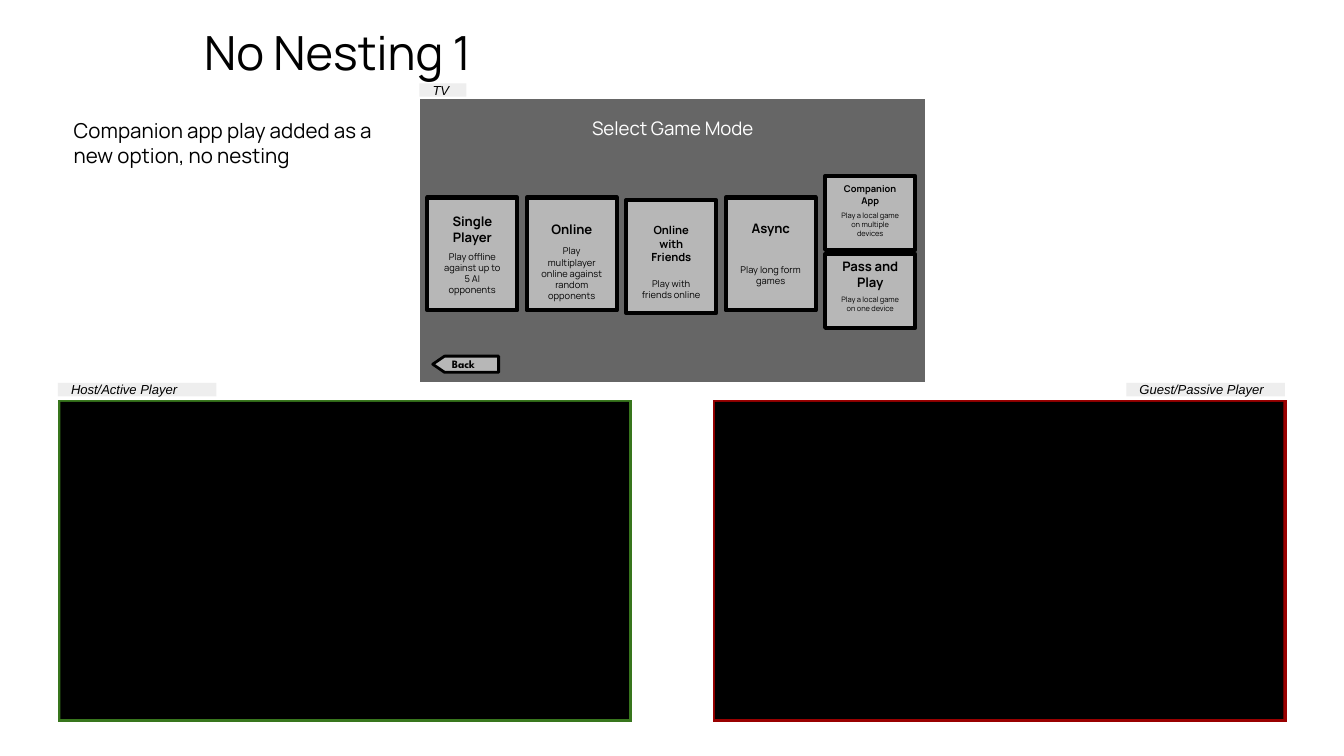
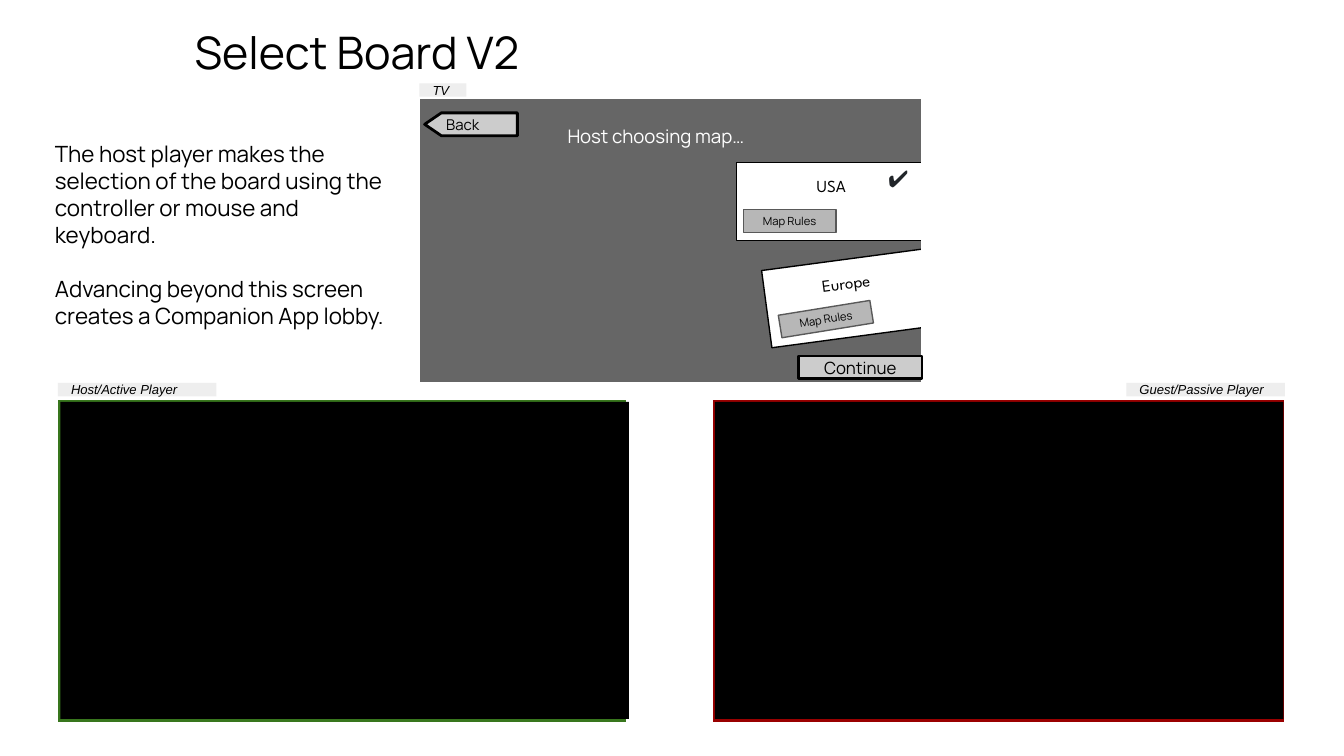
import dataclasses

import pptx
import pptx.dml.color
import pptx.enum.shapes
import pptx.enum.text
import pptx.oxml.ns
import pptx.util

Inches = pptx.util.Inches
Pt = pptx.util.Pt
SHAPE = pptx.enum.shapes.MSO_SHAPE
ALIGN = pptx.enum.text.PP_ALIGN
ANCHOR = pptx.enum.text.MSO_ANCHOR


@dataclasses.dataclass(frozen=True)
class Theme:
    black: str = "000000"
    white: str = "FFFFFF"
    host: str = "38761D"
    guest: str = "990000"
    tv: str = "666666"
    tag: str = "EEEEEE"
    card: str = "B7B7B7"
    button: str = "CCCCCC"
    button_edge: str = "595959"
    tick: str = "212529"
    font: str = "Manrope"
    tag_font: str = "Arial"
    map_font: str = "League Spartan"
    modes_title: float = 25.2
    board_title: float = 24
    modes_body: float = 11
    board_body: float = 12
    prompt: float = 10
    card_title: float = 7
    friends_title: float = 6
    card_note: float = 5
    small_note: float = 4
    tag_size: float = 7
    small_button: float = 6
    back: float = 8
    map_name: float = 9
    tick_size: float = 12.5
    thin: float = 0.75
    medium: float = 1.5
    thick: float = 2.25


THEME = Theme()

# Frame left, frame colour, label left, label
PLAYERS = (
    (0.43, THEME.host, 0.43, "Host/Active Player"),
    (5.3, THEME.guest, 8.38, "Guest/Passive Player"),
)
FRAME_TOP, FRAME_W, FRAME_H = 2.97, 4.28, 2.41
CARD_LEFT, CARD_STEP, CARD_W = 3.18, 0.74, 0.67
CARD_H, SMALL_CARD_H = 0.84, 0.55

# Column, top, height, title, title size, title offset, note, note size, note offset
CARDS = (
    (0, 1.47, CARD_H, "Single Player", THEME.card_title, 0.08,
     "Play offline against up to 5 AI opponents", THEME.card_note, 0.41),
    (1, 1.47, CARD_H, "Online", THEME.card_title, 0.08,
     "Play multiplayer online against random opponents", THEME.card_note, 0.41),
    (2, 1.49, CARD_H, "Online\vwith Friends", THEME.friends_title, 0.17,
     "Play with friends online", THEME.card_note, 0.51),
    (3, 1.47, CARD_H, "Async", THEME.card_title, 0.07,
     "Play long form games", THEME.card_note, 0.42),
    (4, 1.31, SMALL_CARD_H, "Companion App", THEME.card_note, 0.04,
     "Play a local game on multiple devices", THEME.small_note, 0.26),
    (4, 1.89, SMALL_CARD_H, "Pass and Play", THEME.card_title, 0.05,
     "Play a local game on one device", THEME.small_note, 0.27),
)


def rgb(value):
    return pptx.dml.color.RGBColor.from_string(value)


def write(s, paragraphs, size, color=THEME.black, font=THEME.font, align=ALIGN.LEFT,
          anchor=ANCHOR.MIDDLE, gap=0, **style):
    tf = s.text_frame
    frame = {"word_wrap": True, "vertical_anchor": anchor}
    frame.update({f"margin_{side}": Inches(0.1) for side in ("left", "top", "right", "bottom")})
    for name, value in frame.items():
        setattr(tf, name, value)
    for i, text in enumerate(paragraphs):
        p = tf.add_paragraph() if i else tf.paragraphs[0]
        p.text = text
        p.alignment = align
        if i and gap:
            p.space_before = Pt(gap)
        for r in p.runs:
            for name, value in {"name": font, "size": Pt(size), **style}.items():
                setattr(r.font, name, value)
            r.font.color.rgb = rgb(color)


def add_text(slide, at, *paragraphs, **style):
    write(slide.shapes.add_textbox(*map(Inches, at)), paragraphs, **style)


def add_box(slide, at, fill, line=None, width=THEME.thin, preset=SHAPE.RECTANGLE, rotation=0):
    s = slide.shapes.add_shape(preset, *map(Inches, at))
    s.shadow.inherit = False
    s.rotation = rotation
    s.fill.solid()
    s.fill.fore_color.rgb = rgb(fill)
    if line:
        s.line.color.rgb = rgb(line)
        s.line.width = Pt(width)
    else:
        s.line.fill.background()
    return s


def add_title(slide, left, width, text, size):
    add_text(slide, (left, 0.07, width, 0.63), text, size=size)


def add_tag(slide, left, top, width, text):
    s = add_box(slide, (left, top, width, 0.1), THEME.tag)
    write(s, [text], THEME.tag_size, font=THEME.tag_font, italic=True)


def add_frames(slide):
    """Adds the TV and both player frames with their tags."""
    add_box(slide, (3.12, 0.73, 3.77, 2.12), THEME.tv, THEME.white)
    add_tag(slide, 3.12, 0.62, 0.35, "TV")
    for left, color, tag_left, label in PLAYERS:
        add_box(slide, (left, FRAME_TOP, FRAME_W, FRAME_H), color, THEME.white)
        add_tag(slide, tag_left, 2.85, 1.18, label)


def add_player_screens(slide):
    for left, *_ in PLAYERS:
        add_box(slide, (left + 0.02, FRAME_TOP + 0.02, FRAME_W - 0.05, FRAME_H - 0.05),
                THEME.black)


def add_back_button(slide, at, fill, size, **style):
    s = add_box(slide, at, fill, THEME.black, THEME.medium, SHAPE.PENTAGON)
    s.adjustments[0] = 0.73
    s._element.spPr.find(pptx.oxml.ns.qn("a:xfrm")).set("flipH", "1")
    write(s, ["Back"], size, **style)


def add_mode_card(slide, column, top, height, title, title_size, title_dy,
                  note, note_size, note_dy):
    left = CARD_LEFT + CARD_STEP * column
    text_h = 0.31 if height == CARD_H else 0.2
    add_box(slide, (left, top, CARD_W, height), THEME.card, THEME.black, THEME.thick)
    add_text(slide, (left, top + title_dy, CARD_W, text_h), title,
             size=title_size, align=ALIGN.CENTER, bold=True)
    add_text(slide, (left, top + note_dy, CARD_W, text_h), note,
             size=note_size, align=ALIGN.CENTER)


def add_map_card(slide, at, name, rotation=0):
    s = add_box(slide, at, THEME.white, THEME.black, rotation=rotation)
    write(s, [name], THEME.map_name, font=THEME.map_font, align=ALIGN.CENTER,
          anchor=ANCHOR.TOP)


def add_rules_button(slide, left, top, rotation=0):
    s = add_box(slide, (left, top, 0.69, 0.17), THEME.card, THEME.button_edge,
                rotation=rotation)
    write(s, ["Map Rules"], THEME.small_button, align=ALIGN.CENTER)


def build_game_modes(slide):
    add_frames(slide)
    add_player_screens(slide)
    add_text(slide, (3.99, 0.84, 2.03, 0.22), "Select Game Mode",
             size=THEME.prompt, color=THEME.white, align=ALIGN.CENTER)
    for card in CARDS:
        add_mode_card(slide, *card)
    add_back_button(slide, (3.22, 2.65, 0.49, 0.12), THEME.card, THEME.small_button,
                    font=THEME.map_font, bold=True)
    add_title(slide, 1.42, 9.15, "No Nesting 1", THEME.modes_title)
    add_text(slide, (0.45, 0.78, 2.59, 2.11),
             "Companion app play added as a new option, no nesting",
             size=THEME.modes_body, anchor=ANCHOR.TOP)


def build_board_choice(slide):
    add_frames(slide)
    add_text(slide, (0.31, 0.69, 2.72, 2.11),
             "The host player makes the selection of the board using the controller "
             "or mouse and keyboard.",
             "Advancing beyond this screen creates a Companion App lobby.",
             size=THEME.board_body, gap=14.4)
    add_title(slide, 1.35, 9.23, "Select Board V2", THEME.board_title)
    add_map_card(slide, (5.48, 1.21, 1.41, 0.58), "USA")
    add_text(slide, (3.98, 0.86, 1.8, 0.15), "Host choosing map…", size=THEME.prompt,
             color=THEME.white, align=ALIGN.CENTER, anchor=ANCHOR.TOP)
    add_back_button(slide, (3.16, 0.84, 0.69, 0.17), THEME.button, THEME.back)
    add_map_card(slide, (5.7, 1.93, 1.22, 0.58), "Europe", rotation=352.4)
    # White strips trim the right edges of the TV and player frames
    for left, top, height in ((6.86, 0.69, 2.23), (4.66, 2.97, 2.46), (9.56, 2.97, 2.41)):
        add_box(slide, (left, top, 0.29, height), THEME.white, THEME.white)
    add_text(slide, (6.51, 1.12, 0.35, 0.41), "✔", size=THEME.tick_size,
             color=THEME.tick, font=THEME.tag_font, anchor=ANCHOR.TOP)
    add_player_screens(slide)
    add_rules_button(slide, 5.53, 1.56)
    add_rules_button(slide, 5.8, 2.29, rotation=350.8)
    s = add_box(slide, (5.94, 2.65, 0.92, 0.17), THEME.button, THEME.black, THEME.medium)
    write(s, ["Continue"], THEME.map_name, align=ALIGN.CENTER)


def main():
    prs = pptx.Presentation()
    prs.slide_width = Inches(10)
    prs.slide_height = prs.slide_width * 9 // 16
    for build in (build_game_modes, build_board_choice):
        build(prs.slides.add_slide(prs.slide_layouts[6]))
    prs.save("out.pptx")


if __name__ == "__main__":
    main()
